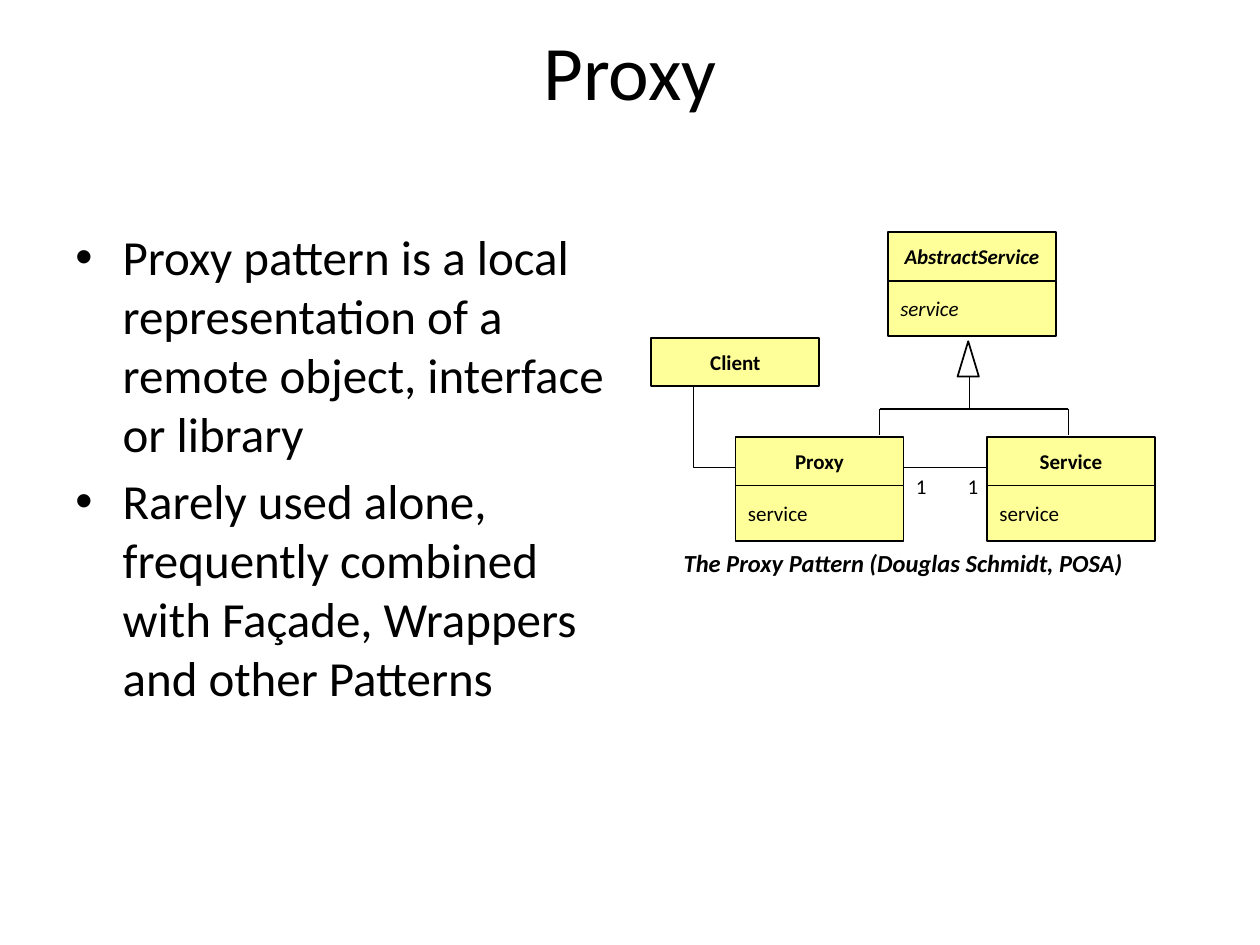
from dataclasses import dataclass

import lxml.etree as etree
import pptx
import pptx.dml.color
import pptx.enum.shapes
import pptx.enum.text
import pptx.oxml.ns
import pptx.util

Pt = pptx.util.Pt
Shape = pptx.enum.shapes.MSO_SHAPE
Align = pptx.enum.text.PP_ALIGN
Anchor = pptx.enum.text.MSO_ANCHOR
qn = pptx.oxml.ns.qn


@dataclass(frozen=True)
class Theme:
    font: str = "Calibri"
    ink: str = "000000"
    paper: str = "FFFFFF"
    box: str = "FFFF99"
    title: float = 44
    body: float = 28
    caption: float = 14
    label: float = 12
    thin: float = 0.75
    edge: float = 1


def color(code):
    return pptx.dml.color.RGBColor.from_string(code)


def write(shape, *lines, theme, size, bold=False, italic=False,
          align=Align.LEFT, anchor=Anchor.TOP, wrap=True, bottom=3.6,
          before=0, bullet=False):
    """Fill a shape with one paragraph per line."""
    frame = shape.text_frame
    frame.word_wrap = wrap
    frame.vertical_anchor = anchor
    frame.margin_bottom = Pt(bottom)
    for i, line in enumerate(lines):
        para = frame.add_paragraph() if i else frame.paragraphs[0]
        para.alignment = align
        para.space_before = Pt(before)
        run = para.add_run()
        run.text = line
        font = run.font
        font.name, font.size = theme.font, Pt(size)
        font.bold, font.italic = bold, italic
        font.color.rgb = color(theme.ink)
        if bullet:
            props = para._p.get_or_add_pPr()
            props.set("marL", str(Pt(27)))
            props.set("indent", str(Pt(-27)))
            etree.SubElement(props, qn("a:buFont"), typeface="Arial")
            etree.SubElement(props, qn("a:buChar"), char="•")


class Board:
    name_high = 27.7
    part_high = 31.6
    wide = 96

    def __init__(self, slide, theme):
        self.slide, self.theme = slide, theme

    def text(self, x, y, w, h, *lines, **form):
        area = self.slide.shapes.add_textbox(Pt(x), Pt(y), Pt(w), Pt(h))
        write(area, *lines, theme=self.theme, **form)

    def paint(self, shape, fill, width):
        shape.shadow.inherit = False
        shape.fill.solid()
        shape.fill.fore_color.rgb = color(fill)
        if width:
            shape.line.color.rgb = color(self.theme.ink)
            shape.line.width = Pt(width)
        else:
            shape.line.fill.background()

    def shape(self, kind, x, y, w, h, fill, width):
        item = self.slide.shapes.add_shape(kind, Pt(x), Pt(y), Pt(w), Pt(h))
        self.paint(item, fill, width)
        return item

    def cell(self, x, y, h, label, **form):
        item = self.shape(Shape.RECTANGLE, x, y, self.wide, h,
                          self.theme.box, self.theme.edge)
        write(item, label, theme=self.theme, size=self.theme.label,
              anchor=Anchor.MIDDLE, **form)

    def entity(self, x, y, name, part=None, italic=False):
        self.cell(x, y, self.name_high, name, bold=True, italic=italic,
                  align=Align.CENTER)
        if part:
            self.cell(x, y + self.name_high, self.part_high, part,
                      italic=italic)

    def count(self, x, y, label):
        item = self.shape(Shape.RECTANGLE, x, y, 20.2, 28.8,
                          self.theme.paper, 0)
        write(item, label, theme=self.theme, size=self.theme.label,
              align=Align.CENTER, wrap=False)

    def line(self, x1, y1, x2, y2):
        link = self.slide.shapes.add_connector(
            pptx.enum.shapes.MSO_CONNECTOR.STRAIGHT,
            Pt(x1), Pt(y1), Pt(x2), Pt(y2))
        link.line.color.rgb = color(self.theme.ink)
        link.line.width = Pt(self.theme.thin)
        etree.SubElement(link._element.spPr, qn("a:effectLst"))

    def bend(self, start, *points):
        pen = self.slide.shapes.build_freeform(Pt(start[0]), Pt(start[1]))
        pen.add_line_segments([(Pt(x), Pt(y)) for x, y in points],
                              close=False)
        self.paint(pen.convert_to_shape(), self.theme.paper, self.theme.thin)


def main():
    deck = pptx.Presentation()
    deck.slide_width, deck.slide_height = Pt(720), Pt(540)
    theme = Theme()
    board = Board(deck.slides.add_slide(deck.slide_layouts[6]), theme)

    # Title, raised by a deep bottom margin
    board.text(36, 21.6, 648, 90, "Proxy", size=theme.title,
               align=Align.CENTER, anchor=Anchor.MIDDLE, bottom=57.3)

    # Bullets
    board.text(
        36, 126, 318.2, 356.4,
        "Proxy pattern is a local representation of a remote object, "
        "interface or library",
        "Rarely used alone, frequently combined with Façade, Wrappers "
        "and other Patterns",
        size=theme.body, before=5, bullet=True)

    # Caption
    board.text(382.3, 309.6, 267.8, 24.5,
               "The Proxy Pattern (Douglas Schmidt, POSA)",
               size=theme.caption, bold=True, italic=True,
               align=Align.CENTER, wrap=False)

    # Proxy and service, with the link between them
    left, right, row, mid = 420.3, 564, 249.7, 267
    edge = left + board.wide
    board.count(edge, mid, "1")
    board.count(right - 18.2, mid, "1")
    for x, name in ((left, "Proxy"), (right, "Service")):
        board.entity(x, row, name, "service")
    board.line(edge, mid, right, mid)

    # Client and its link to the proxy
    board.bend((396.2, 212.4), (396.2, mid), (left, mid))
    board.entity(372.2, 193, "Client")

    # Abstract service and the inheritance tree
    board.entity(507.4, 132.7, "AbstractService", "service", italic=True)
    stem, bar = 553.9, 233.7
    board.line(stem, 211, stem, bar)
    for x in (502.6, 610.5):
        board.line(x, bar, x, row - 1)
    board.line(502.6, bar, 610.5, bar)
    board.shape(Shape.ISOSCELES_TRIANGLE, 547.2, 195, 12.2, 20.2,
                theme.paper, theme.edge)

    deck.save("out.pptx")


if __name__ == "__main__":
    main()
